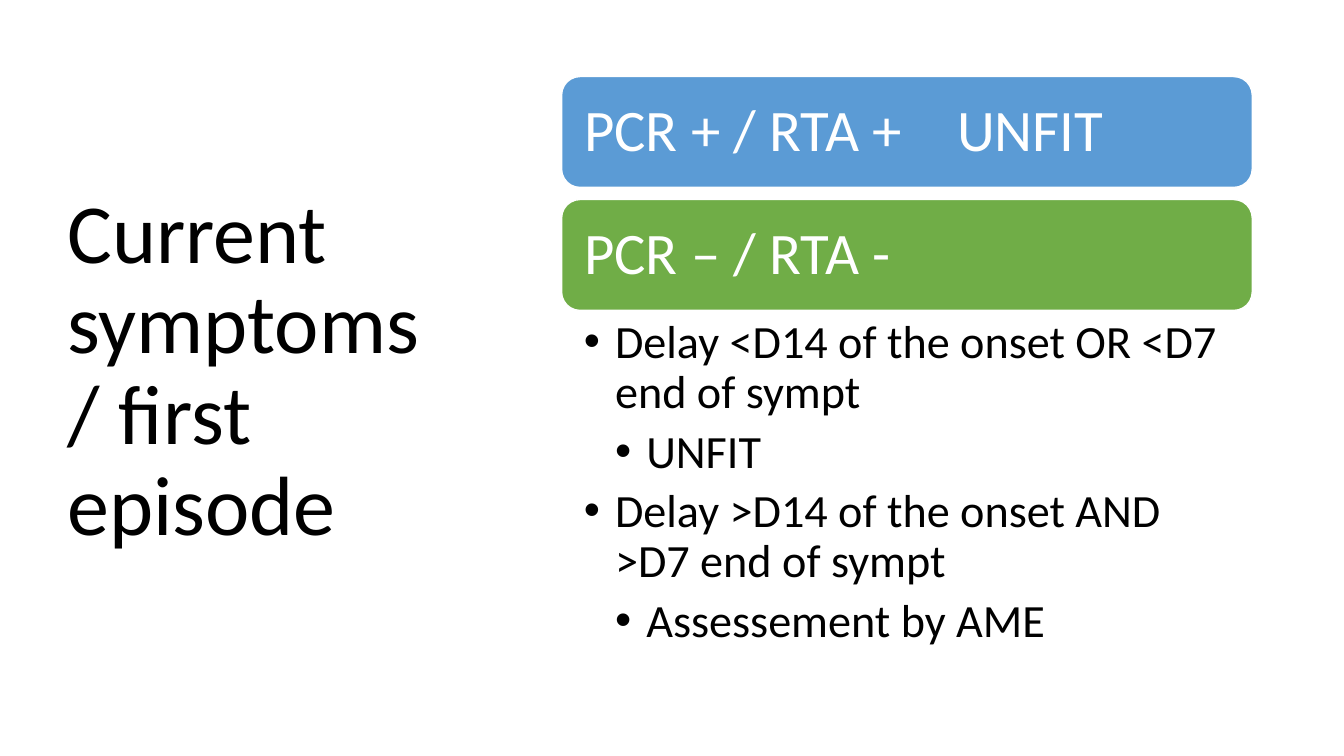
"""Build the slide on fitness decisions for current symptoms in a first episode."""
from dataclasses import dataclass

import pptx
import pptx.dml.color
import pptx.enum.shapes
import pptx.enum.text
import pptx.util
from lxml import etree

Inches = pptx.util.Inches
Pt = pptx.util.Pt


@dataclass(frozen=True)
class Theme:
    font: str = "Calibri"
    dark: str = "000000"
    light: str = "FFFFFF"
    blue: str = "5B9BD5"
    green: str = "70AD47"
    title_size: int = 60
    result_size: int = 42
    criteria_size: int = 33
    line_spacing: float = 0.9
    criteria_gap: int = 7


THEME = Theme()

TITLE = "Current symptoms / first episode"
RESULTS = [
    ("PCR + / RTA +\tUNFIT", THEME.blue),
    ("PCR – / RTA -", THEME.green),
]
CRITERIA = [
    (1, "Delay <D14 of the onset OR <D7 end of sympt"),
    (2, "UNFIT"),
    (1, "Delay >D14 of the onset AND >D7 end of sympt"),
    (2, "Assessement by AME"),
]

TITLE_BOX = (0.57, 0.68, 4.16, 6.02)
COLUMN_LEFT, COLUMN_WIDTH = 5.57, 6.85
RESULT_TOP, RESULT_HEIGHT, RESULT_PITCH = 0.76, 1.1, 1.22
CRITERIA_BOX = (COLUMN_LEFT, 3.1, COLUMN_WIDTH, 3.52)
VERDICT_TAB = 3.7
INDENT = 0.31


def rgb(value):
    return pptx.dml.color.RGBColor.from_string(value)


def set_frame(frame, insets, anchor):
    frame.word_wrap = True
    frame.vertical_anchor = anchor
    frame.margin_left, frame.margin_top, frame.margin_right, frame.margin_bottom = map(Inches, insets)


def write(paragraph, text, size, color):
    paragraph.line_spacing = THEME.line_spacing
    paragraph.alignment = pptx.enum.text.PP_ALIGN.LEFT
    run = paragraph.add_run()
    run.text = text
    run.font.name = THEME.font
    run.font.size = Pt(size)
    run.font.color.rgb = rgb(color)


def add_property(parent, tag, **attributes):
    return etree.SubElement(parent, pptx.oxml.ns.qn(tag), attributes)


def add_title(slide):
    frame = slide.shapes.add_textbox(*map(Inches, TITLE_BOX)).text_frame
    set_frame(frame, (0.1, 0.05, 0.1, 0.05), pptx.enum.text.MSO_ANCHOR.MIDDLE)
    write(frame.paragraphs[0], TITLE, THEME.title_size, THEME.dark)


def add_result(slide, row, text, color):
    bar = slide.shapes.add_shape(
        pptx.enum.shapes.MSO_SHAPE.ROUNDED_RECTANGLE,
        Inches(COLUMN_LEFT), Inches(RESULT_TOP + row * RESULT_PITCH),
        Inches(COLUMN_WIDTH), Inches(RESULT_HEIGHT),
    )
    bar.shadow.inherit = False
    bar.fill.solid()
    bar.fill.fore_color.rgb = rgb(color)
    bar.line.color.rgb = rgb(THEME.light)
    bar.line.width = Pt(1)
    set_frame(bar.text_frame, (0.17,) * 4, pptx.enum.text.MSO_ANCHOR.MIDDLE)
    paragraph = bar.text_frame.paragraphs[0]
    if "\t" in text:
        tabs = add_property(paragraph._p.get_or_add_pPr(), "a:tabLst")
        add_property(tabs, "a:tab", pos=str(Inches(VERDICT_TAB)), algn="l")
    write(paragraph, text, THEME.result_size, THEME.light)


def add_criteria(slide):
    frame = slide.shapes.add_textbox(*map(Inches, CRITERIA_BOX)).text_frame
    set_frame(frame, (0.22, 0.06, 0.33, 0.06), pptx.enum.text.MSO_ANCHOR.TOP)
    for index, (level, text) in enumerate(CRITERIA):
        paragraph = frame.add_paragraph() if index else frame.paragraphs[0]
        paragraph.level = level
        properties = paragraph._p.get_or_add_pPr()
        properties.set("marL", str(Inches(INDENT * level)))
        properties.set("indent", str(-Inches(INDENT)))
        add_property(properties, "a:buFont", typeface="Arial")
        add_property(properties, "a:buChar", char="•")
        paragraph.space_after = Pt(THEME.criteria_gap)
        write(paragraph, text, THEME.criteria_size, THEME.dark)


def main():
    presentation = pptx.Presentation()
    presentation.slide_width = Inches(13.33)
    presentation.slide_height = Inches(7.5)
    slide = presentation.slides.add_slide(presentation.slide_layouts[6])
    add_title(slide)
    for row, (text, color) in enumerate(RESULTS):
        add_result(slide, row, text, color)
    add_criteria(slide)
    presentation.save("out.pptx")


if __name__ == "__main__":
    main()
